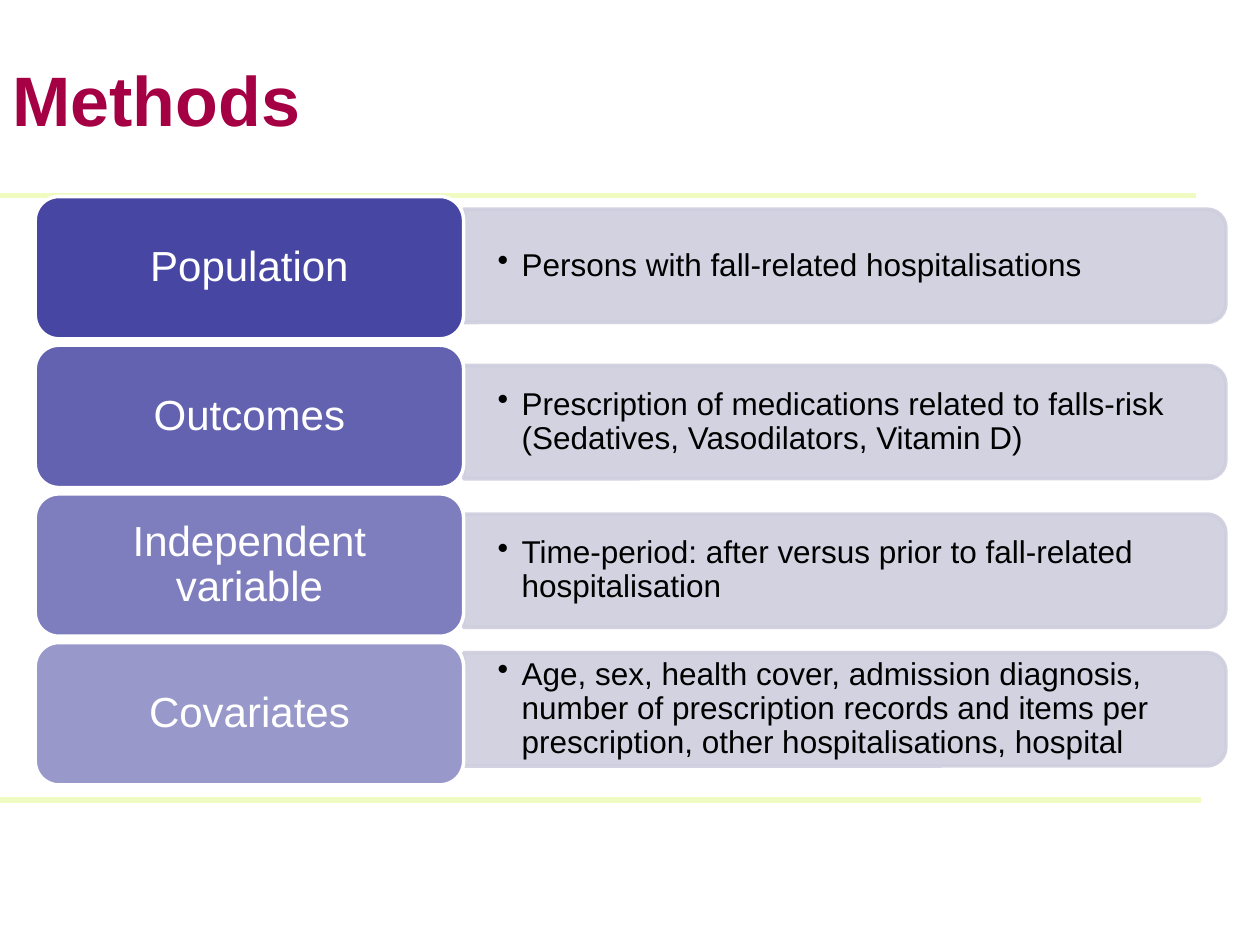
from lxml import etree
from pptx import Presentation
from pptx import util as u
from pptx.dml.color import RGBColor
from pptx.enum import shapes, text
from pptx.oxml.ns import qn

COLOURS = {
    "title": "A50044",
    "rule": "EFFBC1",
    "label": "333399",
    "panel": "CECEDE",
    "white": "FFFFFF",
    "black": "000000",
}
FONT = "Arial"
ROWS = [
    ("Population", 90, 0.1, "Persons with fall-related hospitalisations"),
    ("Outcomes", 77, 0.16,
     "Prescription of medications related to falls-risk (Sedatives, Vasodilators, Vitamin D)"),
    ("Independent variable", 63, 0.16,
     "Time-period: after versus prior to fall-related hospitalisation"),
    ("Covariates", 50, 0.08,
     "Age, sex, health cover, admission diagnosis, number of prescription records "
     "and items per prescription, other hospitalisations, hospital"),
]
ROW_PITCH = 1.18
LABEL_WIDTH = 3.4
PANEL_HEIGHT = 0.9


def colour(name):
    return RGBColor.from_string(COLOURS[name])


def set_alpha(fill_parent, percent):
    tint = fill_parent.find(qn("a:solidFill")).find(qn("a:srgbClr"))
    etree.SubElement(tint, qn("a:alpha")).set("val", str(percent * 1000))


def add_block(page, kind, box, fill, alpha, line):
    block = page.shapes.add_shape(kind, *map(u.Inches, box))
    block.shadow.inherit = False
    block.fill.solid()
    block.fill.fore_color.rgb = colour(fill)
    set_alpha(block.element.spPr, alpha)
    block.line.color.rgb = colour(line)
    block.line.width = u.Pt(2)
    return block


def set_frame(frame, across, down):
    frame.word_wrap = True
    frame.auto_size = text.MSO_AUTO_SIZE.NONE
    frame.vertical_anchor = text.MSO_ANCHOR.MIDDLE
    frame.margin_left = frame.margin_right = u.Inches(across)
    frame.margin_top = frame.margin_bottom = u.Inches(down)


def add_span(para, words, size, name, bold=False):
    span = para.add_run()
    span.text = words
    span.font.name = FONT
    span.font.size = u.Pt(size)
    span.font.bold = bold
    span.font.color.rgb = colour(name)


def add_title(page, box, words):
    title = page.shapes.title
    title.left, title.top, title.width, title.height = map(u.Inches, box)
    set_frame(title.text_frame, 0.1, 0.05)
    para = title.text_frame.paragraphs[0]
    para.alignment = text.PP_ALIGN.LEFT
    add_span(para, words, 40, "title", bold=True)


def add_rule(page, top, width):
    rule = page.shapes.add_connector(
        shapes.MSO_CONNECTOR.STRAIGHT,
        u.Inches(0), u.Inches(top), u.Inches(width), u.Inches(top))
    rule.line.color.rgb = colour("rule")
    rule.line.width = u.Pt(3)
    etree.SubElement(rule.element.spPr, qn("a:effectLst"))


def add_panel(page, box, words):
    left, top, width, height = box
    turned = (left + (width - height) / 2, top + (height - width) / 2, height, width)
    panel = add_block(page, shapes.MSO_SHAPE.ROUND_2_SAME_RECTANGLE, turned,
                      "panel", 90, "panel")
    panel.rotation = 90
    set_alpha(panel.line._get_or_add_ln(), 90)

    inset = 0.05
    area = (left, top + inset, width - inset, height - 2 * inset)
    note = page.shapes.add_textbox(*map(u.Inches, area))
    set_frame(note.text_frame, 0.27, 0.14)
    para = note.text_frame.paragraphs[0]
    para.level = 1
    para.line_spacing = 0.9
    properties = para._p.get_or_add_pPr()
    properties.set("marL", str(u.Inches(0.19)))
    properties.set("indent", str(u.Inches(-0.19)))
    etree.SubElement(properties, qn("a:buChar")).set("char", "•")
    add_span(para, words, 18, "black")


def add_label(page, box, words, alpha):
    label = add_block(page, shapes.MSO_SHAPE.ROUNDED_RECTANGLE, box,
                      "label", alpha, "white")
    set_frame(label.text_frame, 0.15, 0.08)
    para = label.text_frame.paragraphs[0]
    para.alignment = text.PP_ALIGN.CENTER
    para.line_spacing = 0.9
    add_span(para, words, 24, "white")


def add_rows(page, box):
    left, top, width, height = box
    label_height = height - ROW_PITCH * (len(ROWS) - 1)
    for index, (name, alpha, drop, words) in enumerate(ROWS):
        row_top = top + index * ROW_PITCH
        add_panel(page, (left + LABEL_WIDTH, row_top + drop,
                         width - LABEL_WIDTH, PANEL_HEIGHT), words)
        add_label(page, (left, row_top, LABEL_WIDTH, label_height), name, alpha)


def main():
    deck = Presentation()
    deck.slide_width, deck.slide_height = u.Inches(10), u.Inches(7.5)
    page = deck.slides.add_slide(deck.slide_layouts[5])
    add_rule(page, 1.55, 9.49)
    add_rule(page, 6.35, 9.53)
    add_title(page, (0, 0.01, 8.15, 1.55), "Methods")
    add_rows(page, (0.28, 1.56, 9.45, 4.67))
    deck.save("out.pptx")


if __name__ == "__main__":
    main()
